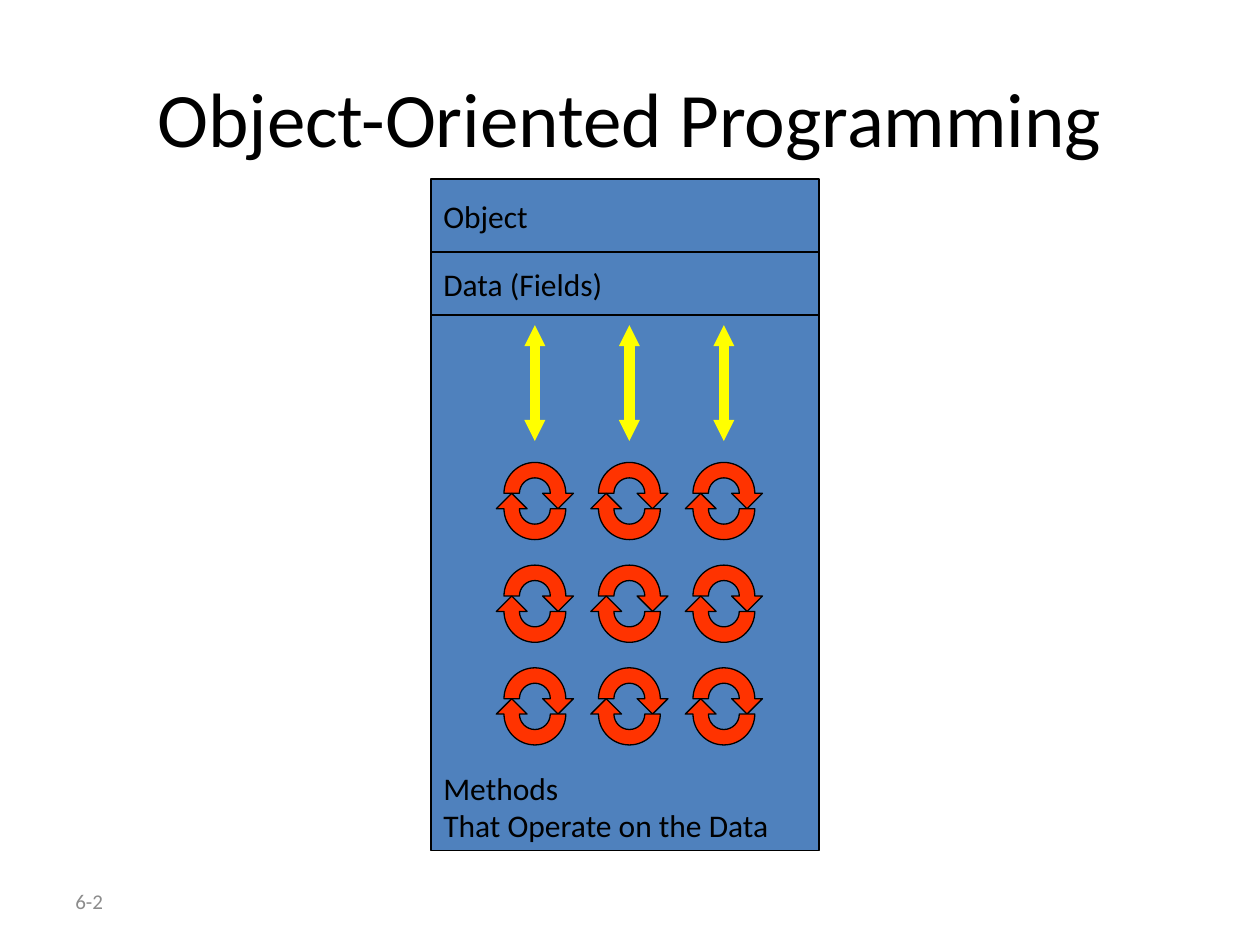
from lxml.etree import SubElement
from pptx import Presentation
from pptx.dml.color import RGBColor
from pptx.enum.shapes import MSO_CONNECTOR, MSO_SHAPE
from pptx.enum.text import MSO_ANCHOR, PP_ALIGN
from pptx.oxml.ns import qn
from pptx.util import Inches, Pt

BLACK = RGBColor(0x00, 0x00, 0x00)
GRAY = RGBColor(0x8C, 0x8C, 0x8C)
BLUE = RGBColor(0x4F, 0x81, 0xBD)
RED = RGBColor(0xFF, 0x33, 0x00)
YELLOW = RGBColor(0xFF, 0xFF, 0x00)
FONT = "Calibri"

# Content
TITLE = "Object-Oriented Programming"
PAGE = "6-2"
SECTIONS = [  # lines, height in inches, anchor
    (["Object"], 0.58, MSO_ANCHOR.MIDDLE),
    (["Data (Fields)"], 0.5, MSO_ANCHOR.MIDDLE),
    (["Methods", "That Operate on the Data"], 4.25, MSO_ANCHOR.BOTTOM),
]

# Layout in inches
BOX_LEFT, BOX_TOP, BOX_WIDTH = 3.42, 1.42, 3.08
COUNT = 3
COLUMNS = [4 + 0.75 * i for i in range(COUNT)]
FIRST_ROW, LAST_ROW = 3.67, 5.3
ROWS = [FIRST_ROW + (LAST_ROW - FIRST_ROW) * i / (COUNT - 1) for i in range(COUNT)]
ARROW_TOP, ARROW_BOTTOM = 2.58, 3.5
RING = 0.49  # diameter of a cycle's ring
BAND = RING / 4  # its thickness
BEZIER = 0.55  # handle length of a quarter circle, as a share of the radius


def add_lines(frame, lines, size, color, align=PP_ALIGN.LEFT):
    paragraph = frame.paragraphs[0]
    paragraph.alignment = align
    for i, line in enumerate(lines):
        if i:
            paragraph.add_line_break()
        run = paragraph.add_run()
        run.text = line
        run.font.name, run.font.size = FONT, Pt(size)
        run.font.color.rgb = color


def paint(shape, color):
    shape.shadow.inherit = False
    shape.fill.solid()
    shape.fill.fore_color.rgb = color
    shape.line.color.rgb = BLACK
    shape.line.width = Pt(0.75)


def half_arc(radius, side):
    """Two curves over the ring's centre, starting on side 1 (right) or -1 (left)."""
    handle = radius * BEZIER
    start = side * radius
    return [
        ("a:cubicBezTo", [(start, -handle), (side * handle, -radius), (0, -radius)]),
        ("a:cubicBezTo", [(-side * handle, -radius), (-start, -handle), (-start, 0)]),
    ]


# Upper half ring with an arrowhead on its right, in bands from the ring's centre
HALF_CYCLE = [
    ("a:moveTo", [(1, 0)]),
    *half_arc(1, 1),
    ("a:lnTo", [(-2, 0)]),
    *half_arc(2, -1),
    *[("a:lnTo", [point]) for point in [(2.5, 0), (1.5, 1), (0.5, 0), (1, 0)]],
    ("a:close", []),
]


def add_half_cycle(shapes, left, top, turn):
    # A square frame, whose outline then becomes the curved one
    builder = shapes.build_freeform(Inches(left), Inches(top))
    builder.add_line_segments([(Inches(left + RING * x), Inches(top + RING * y))
                               for x, y in [(1, 0), (1, 1), (0, 1)]])
    half = builder.convert_to_shape()
    outline = half._element.spPr.find(".//" + qn("a:path"))
    for step in list(outline):
        outline.remove(step)
    for command, points in HALF_CYCLE:
        step = SubElement(outline, qn(command))
        for x, y in points:
            SubElement(step, qn("a:pt"), x=str(Inches(RING / 2 + turn * BAND * x)),
                       y=str(Inches(RING / 2 + turn * BAND * y)))
    paint(half, RED)


def add_double_arrow(shapes, x):
    arrow = shapes.add_connector(MSO_CONNECTOR.STRAIGHT, Inches(x), Inches(ARROW_BOTTOM),
                                 Inches(x), Inches(ARROW_TOP))
    arrow.line.color.rgb = YELLOW
    arrow.line.width = Pt(6)
    line = arrow.line._get_or_add_ln()
    for end in ("a:headEnd", "a:tailEnd"):
        SubElement(line, qn(end), type="triangle", w="sm", len="sm")
    SubElement(arrow._element.spPr, qn("a:effectLst"))


def main():
    deck = Presentation()
    deck.slide_width, deck.slide_height = Inches(10), Inches(7.5)
    slide = deck.slides.add_slide(deck.slide_layouts[5])

    # Page number
    page = slide.shapes.add_textbox(Inches(0.5), Inches(6.95), Inches(2.33), Inches(0.4))
    page.text_frame.word_wrap = True
    page.text_frame.vertical_anchor = MSO_ANCHOR.MIDDLE
    add_lines(page.text_frame, [PAGE], 12, GRAY)

    # Title
    title = slide.shapes.title
    title.left, title.top = Inches(0.5), Inches(0.3)
    title.width, title.height = Inches(9), Inches(1.25)
    title.text_frame.vertical_anchor = MSO_ANCHOR.MIDDLE
    add_lines(title.text_frame, [TITLE], 44, BLACK, PP_ALIGN.CENTER)

    # Object box with its stacked sections
    diagram = slide.shapes.add_group_shape().shapes
    top = BOX_TOP
    for lines, height, anchor in SECTIONS:
        section = diagram.add_shape(MSO_SHAPE.RECTANGLE, Inches(BOX_LEFT), Inches(top),
                                    Inches(BOX_WIDTH), Inches(height))
        paint(section, BLUE)
        section.text_frame.word_wrap = False
        section.text_frame.vertical_anchor = anchor
        add_lines(section.text_frame, lines, 18, BLACK)
        top += height

    # Methods as cycles: the lower half is the upper one turned by 180 degrees
    for y in ROWS:
        for x in COLUMNS:
            add_half_cycle(diagram, x, y, 1)
            add_half_cycle(diagram, x, y + BAND, -1)

    # Arrows that link the methods with the data
    for x in COLUMNS:
        add_double_arrow(diagram, x + 2 * BAND)

    deck.save("out.pptx")


if __name__ == "__main__":
    main()
